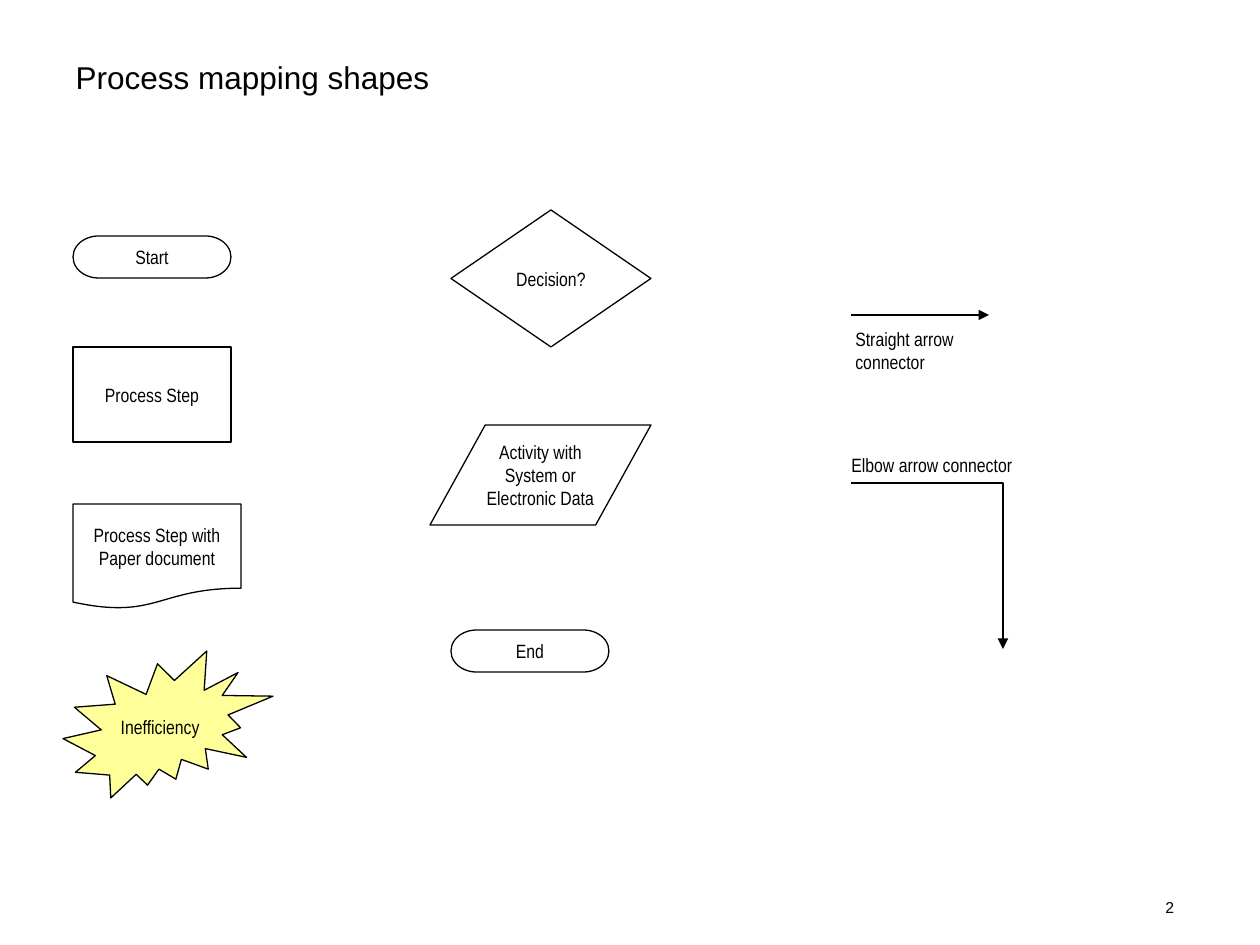
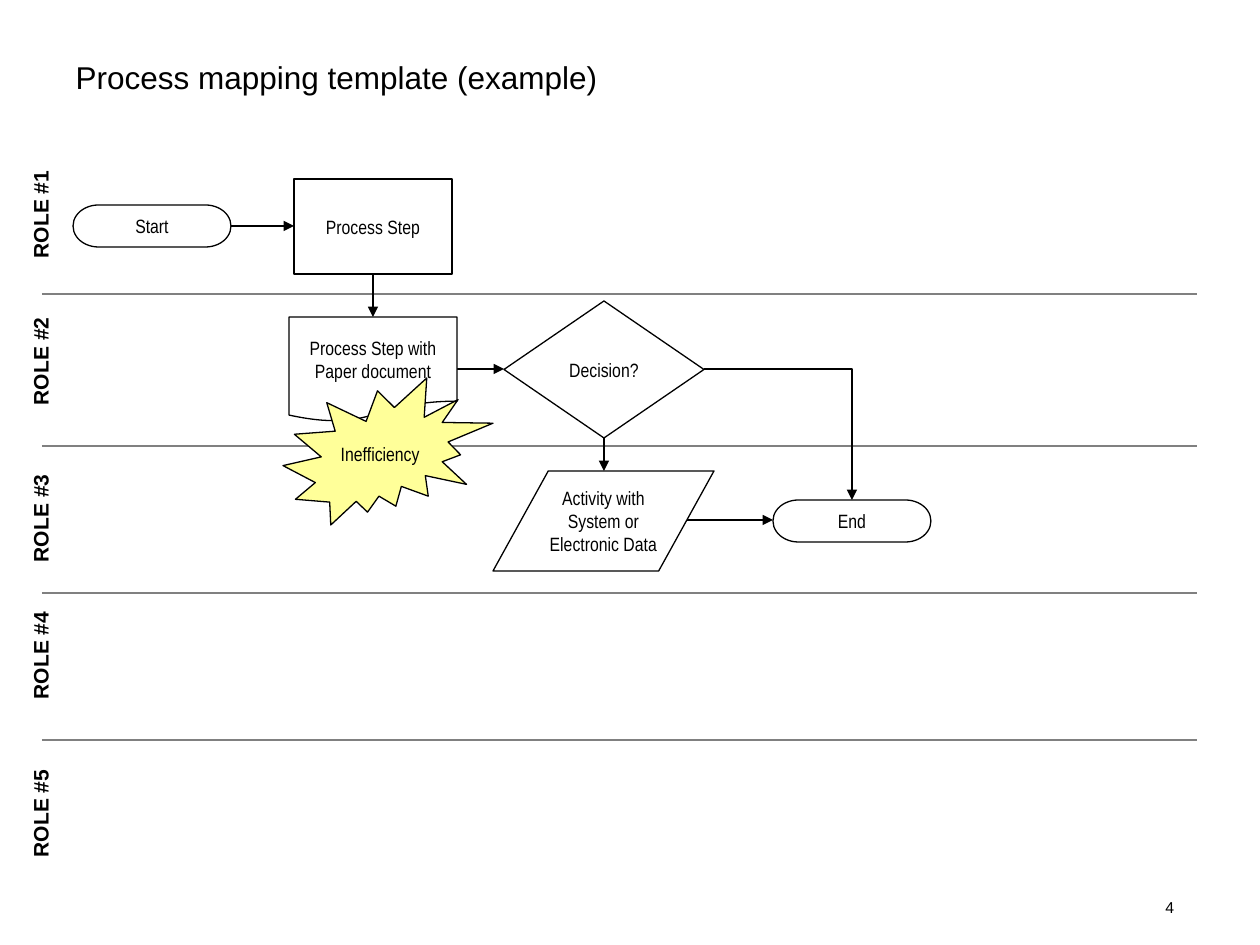
from lxml import etree
from pptx import Presentation
from pptx.dml.color import RGBColor
from pptx.enum.shapes import MSO_CONNECTOR, MSO_SHAPE
from pptx.enum.text import MSO_ANCHOR, MSO_AUTO_SIZE, PP_ALIGN
from pptx.oxml.ns import qn
from pptx.util import Emu, Pt

PX = 914400 // 126  # one px in EMU
TITLE_ONLY = 5
STRAIGHT, ELBOW = MSO_CONNECTOR.STRAIGHT, MSO_CONNECTOR.ELBOW
LEFT, CENTER = PP_ALIGN.LEFT, PP_ALIGN.CENTER
TOP, MIDDLE = MSO_ANCHOR.TOP, MSO_ANCHOR.MIDDLE
NO_FIT = MSO_AUTO_SIZE.NONE
TERMINATOR = MSO_SHAPE.FLOWCHART_TERMINATOR
PROCESS = MSO_SHAPE.FLOWCHART_PROCESS
DOCUMENT = MSO_SHAPE.FLOWCHART_DOCUMENT
DIAMOND = MSO_SHAPE.DIAMOND
PARALLELOGRAM = MSO_SHAPE.PARALLELOGRAM
BURST = MSO_SHAPE.EXPLOSION2

COLORS = {"ink": "000000", "paper": "FFFFFF", "warning": "FFFF99", "lane": "808080"}

TITLE_FONT = {"name": "Arial", "size": Pt(18), "bold": False}
NUMBER_FONT = {"name": "Arial", "size": Pt(9)}
ROLE_FONT = {"name": "Arial", "size": Pt(12), "bold": True}
STEP_FONT = {"name": "Arial Narrow", "size": Pt(11)}

# Each symbol: preset, width, height, fill
SYMBOLS = {
    "Start": (TERMINATOR, 158, 42, "paper"),
    "End": (TERMINATOR, 158, 42, "paper"),
    "Process Step": (PROCESS, 158, 95, "paper"),
    "Process Step with Paper document": (DOCUMENT, 168, 105, "paper"),
    "Decision?": (DIAMOND, 200, 137, "paper"),
    "Activity with System or Electronic Data": (PARALLELOGRAM, 221, 100, "paper"),
    "Inefficiency": (BURST, 210, 147, "warning"),
}
SLANT = 0.553

# Top left corner of each symbol, from back to front
LEGEND_PLACES = {
    "Start": (73, 236),
    "Process Step": (73, 347),
    "End": (451, 630),
    "Process Step with Paper document": (73, 504),
    "Decision?": (451, 210),
    "Activity with System or Electronic Data": (430, 425),
    "Inefficiency": (63, 651),
}
EXAMPLE_PLACES = {
    "Start": (73, 205),
    "Process Step": (294, 179),
    "End": (773, 500),
    "Process Step with Paper document": (289, 317),
    "Decision?": (504, 301),
    "Activity with System or Electronic Data": (493, 471),
    "Inefficiency": (283, 378),
}
EXAMPLE_ARROWS = [
    (231, 226, 294, 226),
    (373, 273, 373, 317),
    (457, 369, 504, 369),
    (604, 437, 604, 471),
    (687, 520, 773, 520),
]
LANE_LINES = [294, 446, 593, 740]
ROLE_CENTERS = [214, 361, 518, 655, 813]


def px(*lengths):
    return [Emu(length * PX) for length in lengths]


def color(name):
    return RGBColor.from_string(COLORS[name])


def set_values(target, values):
    for name, value in values.items():
        setattr(target, name, value)


def write(shape, text, font, align=LEFT, anchor=TOP, wrap=True):
    frame = shape.text_frame
    set_values(frame, {"word_wrap": wrap, "auto_size": NO_FIT, "vertical_anchor": anchor})
    para = frame.paragraphs[0]
    para.alignment = align
    span = para.add_run()
    span.text = text
    set_values(span.font, font)
    span.font.color.rgb = color("ink")


def add_label(page, text, place, font, wrap=True):
    box = page.shapes.add_textbox(*px(*place))
    write(box, text, font, wrap=wrap)
    return box


def add_symbol(page, text, left, top):
    preset, width, height, fill = SYMBOLS[text]
    symbol = page.shapes.add_shape(preset, *px(left, top, width, height))
    symbol.shadow.inherit = False
    if preset == PARALLELOGRAM:
        symbol.adjustments[0] = SLANT
    symbol.fill.solid()
    symbol.fill.fore_color.rgb = color(fill)
    symbol.line.color.rgb = color("ink")
    symbol.line.width = Pt(0.75)
    write(symbol, text, STEP_FONT, CENTER, MIDDLE, wrap=preset != BURST)


def add_line(page, ends, kind=STRAIGHT, ink="ink", weight=0.75):
    line = page.shapes.add_connector(kind, *px(*ends))
    line.line.color.rgb = color(ink)
    line.line.width = Pt(weight)
    etree.SubElement(line._element.spPr, qn("a:effectLst"))
    return line


def add_arrow(page, ends, kind=STRAIGHT):
    arrow = add_line(page, ends, kind)
    etree.SubElement(arrow.line._get_or_add_ln(), qn("a:tailEnd"), type="triangle")
    if kind == ELBOW:  # a single bend
        arrow._element.spPr.find(qn("a:prstGeom")).set("prst", "bentConnector2")


def add_page(deck, title, number):
    page = deck.slides.add_slide(deck.slide_layouts[TITLE_ONLY])
    heading = page.shapes.title
    left, top, width, height = px(63, 38, 1134, 78)
    set_values(heading, {"left": left, "top": top, "width": width, "height": height})
    write(heading, title, TITLE_FONT, anchor=MIDDLE)
    add_label(page, number, (1153, 892, 44, 32), NUMBER_FONT)
    return page


def add_legend(deck):
    page = add_page(deck, "Process mapping shapes", "2")
    for text, place in LEGEND_PLACES.items():
        add_symbol(page, text, *place)
    # Connectors with their names
    add_arrow(page, (851, 315, 989, 315))
    add_label(page, "Straight arrow connector", (843, 321, 190, 35), STEP_FONT)
    add_arrow(page, (851, 483, 1003, 649), ELBOW)
    add_label(page, "Elbow arrow connector", (839, 447, 190, 35), STEP_FONT)


def add_example(deck):
    page = add_page(deck, "Process mapping template (example)", "4")
    # Role lanes
    for y in LANE_LINES:
        add_line(page, (42, y, 1197, y), ink="lane", weight=1.5)
    for index, center in enumerate(ROLE_CENTERS, 1):
        place = (-16, center - 19, 113, 38)
        role = add_label(page, f"ROLE #{index}", place, ROLE_FONT, wrap=False)
        role.rotation = 270
    # Process flow
    for ends in EXAMPLE_ARROWS:
        add_arrow(page, ends)
    add_arrow(page, (704, 369, 852, 500), ELBOW)
    for text, place in EXAMPLE_PLACES.items():
        add_symbol(page, text, *place)


def main():
    deck = Presentation()
    deck.slide_width, deck.slide_height = px(1260, 945)
    add_legend(deck)
    add_example(deck)
    deck.save("out.pptx")


if __name__ == "__main__":
    main()
